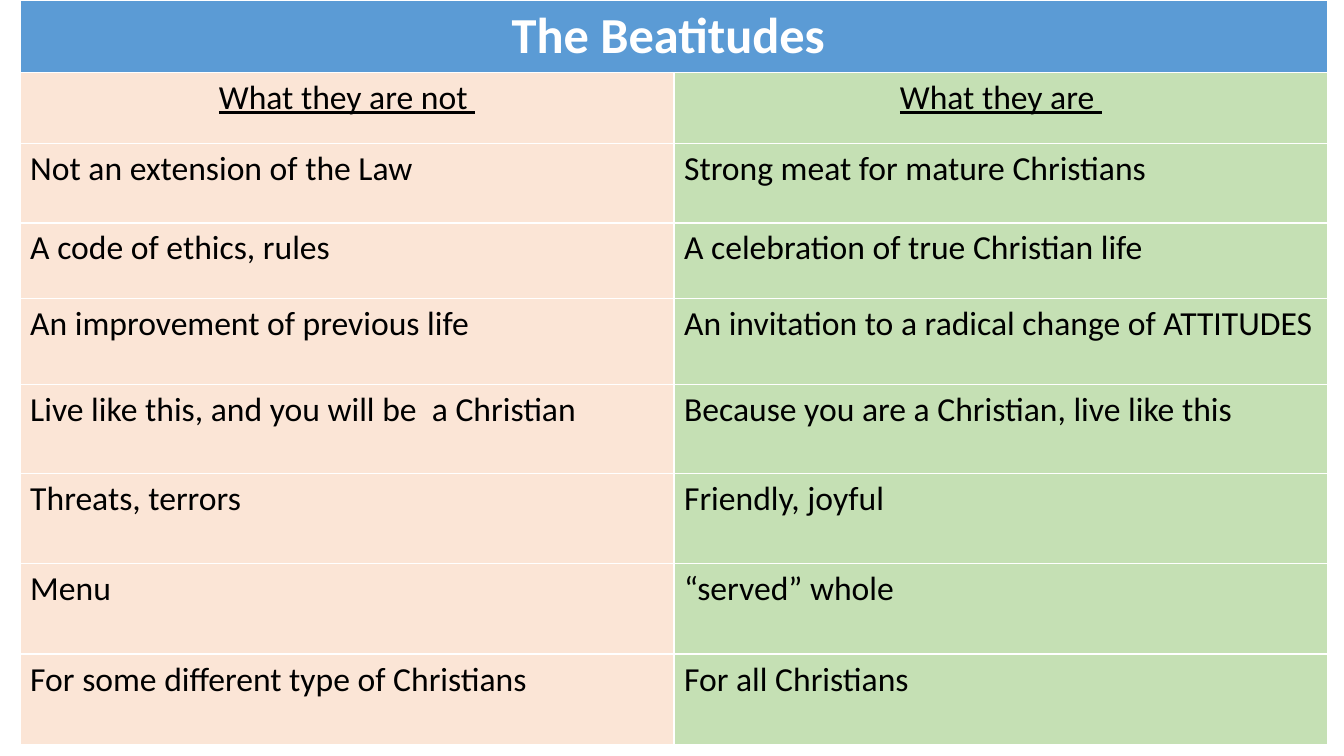
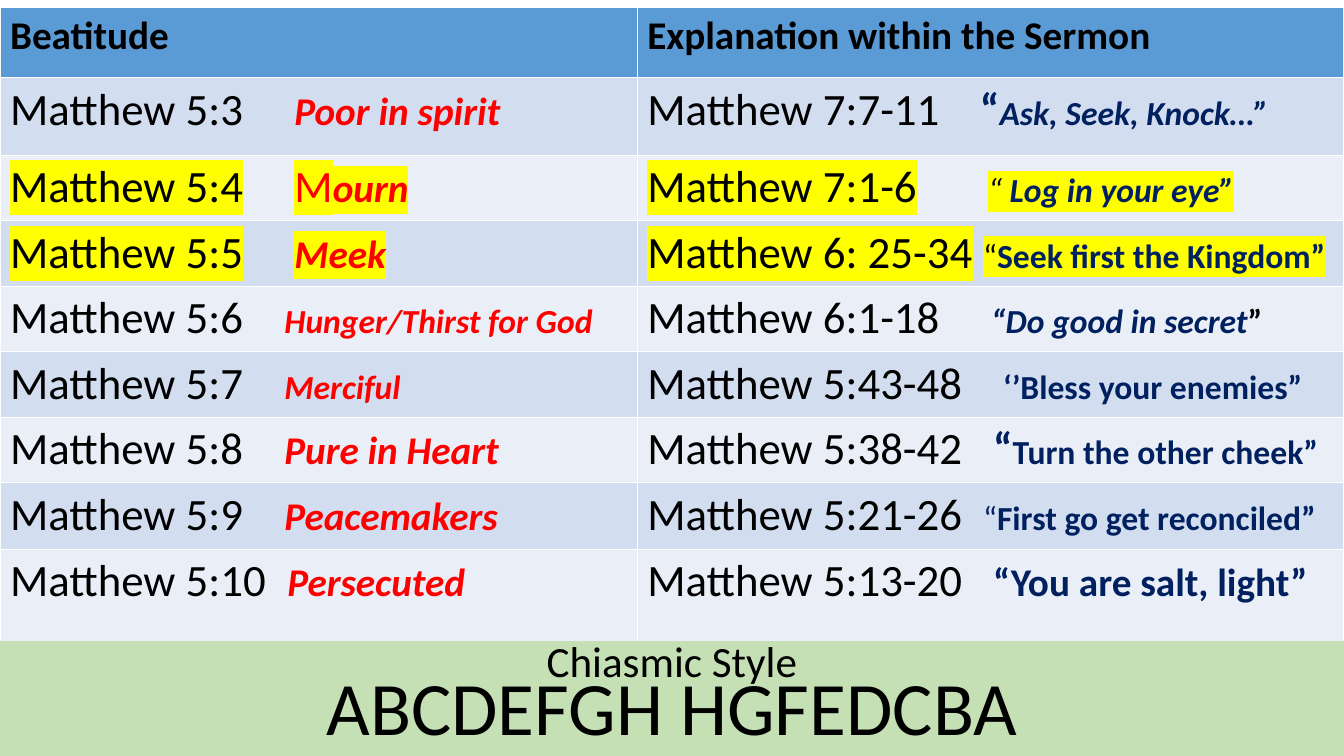
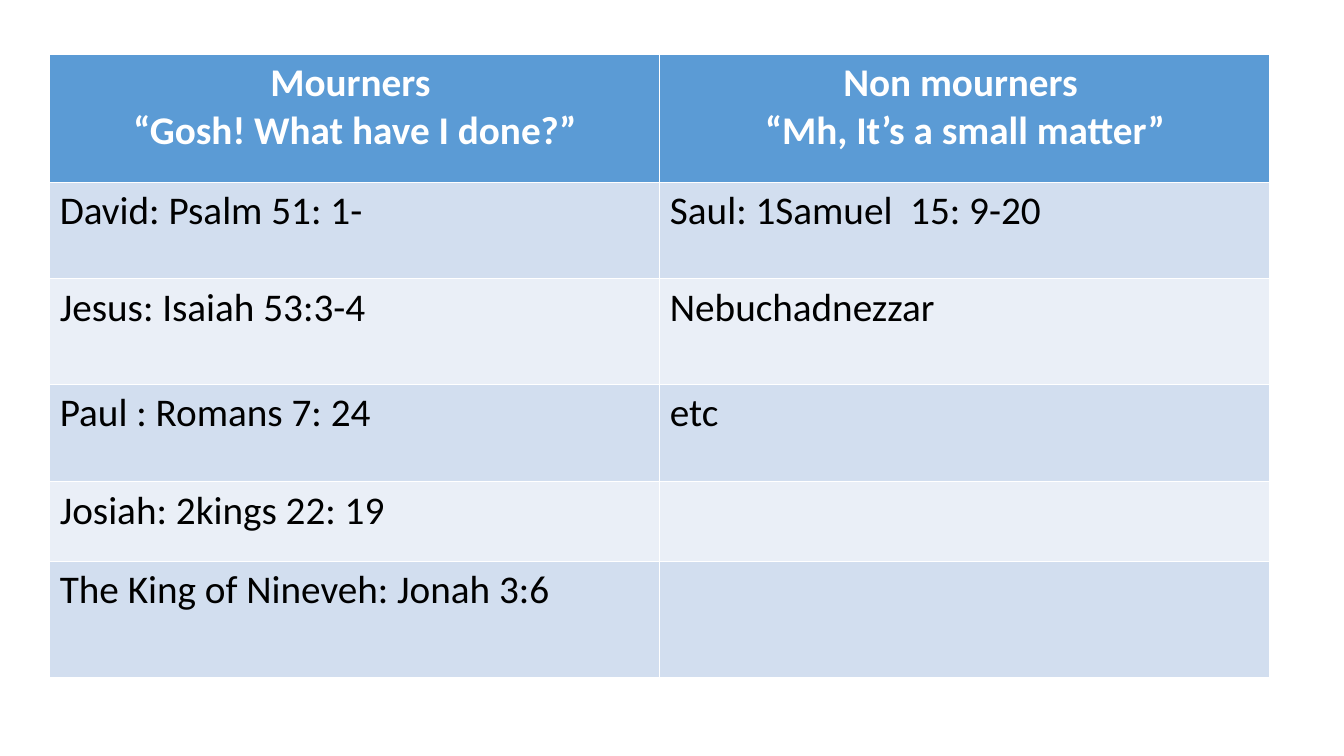
import pptx
import pptx.util
import pptx.dml.color
import pptx.enum.text
import lxml.etree

HUES = {
    "blue": "5B9BD5", "band": "D2DEEF", "pale": "EAEFF7", "peach": "FBE5D6",
    "green": "C5E0B4", "white": "FFFFFF", "black": "000000", "red": "FF0000",
    "navy": "002060", "yellow": "FFFF00",
}
FONT = "Calibri"
MID = pptx.enum.text.PP_ALIGN.CENTER
BLANK, TITLED = 6, 5


def tint(name):
    return pptx.dml.color.RGBColor.from_string(HUES[name])


def add_xml(tag, **attrs):
    return lxml.etree.Element(pptx.oxml.ns.qn(tag), **attrs)


def write(para, text, size=28, hue="black", bold=False, slant=False,
          under=False, mark=None):
    """Append one run; mark names a highlight colour."""
    run = para.add_run()
    run.text = text
    font = run.font
    font.name, font.size = FONT, pptx.util.Pt(size)
    font.bold, font.italic, font.underline = bold, slant, under
    font.color.rgb = tint(hue)
    if mark:
        light = add_xml("a:highlight")
        light.append(add_xml("a:srgbClr", val=HUES[mark]))
        run._r.rPr.find(pptx.oxml.ns.qn("a:solidFill")).addnext(light)


def set_tab(para, inches):
    stops = add_xml("a:tabLst")
    stops.append(add_xml("a:tab", pos=str(pptx.util.Inches(inches)), algn="l"))
    para._p.get_or_add_pPr().append(stops)


class Deck:
    """Holds the style and the current slide; boxes are percent of the slide."""

    def __init__(self):
        self.file = pptx.Presentation()
        self.file.slide_width = pptx.util.Inches(13.33)
        self.file.slide_height = pptx.util.Inches(7.5)

    def page(self, kind=BLANK):
        self.slide = self.file.slides.add_slide(self.file.slide_layouts[kind])

    def place(self, box):
        wide, high = self.file.slide_width, self.file.slide_height
        return [int(part * full / 100)
                for part, full in zip(box, (wide, high, wide, high))]

    def table(self, box, cols, rows):
        """Add a table whose columns and rows share the box by weight."""
        left, top, width, height = self.place(box)
        grid = self.slide.shapes.add_table(
            len(rows), len(cols), left, top, width, height).table
        for col, part in zip(grid.columns, cols):
            col.width = int(width * part / sum(cols))
        for row, part in zip(grid.rows, rows):
            row.height = int(height * part / sum(rows))
        return grid

    def cell(self, cell, fill, text="", align=None, **style):
        """Fill a cell and write its lines; return the first paragraph."""
        cell.fill.solid()
        cell.fill.fore_color.rgb = tint(fill)
        frame = cell.text_frame
        for num, line in enumerate(text.split("\n") if text else []):
            para = frame.add_paragraph() if num else frame.paragraphs[0]
            para.alignment = align
            write(para, line, **style)
        return frame.paragraphs[0]

    def title(self, box, fill, lines):
        """Use the title placeholder as a filled band of (text, size) lines."""
        band = self.slide.shapes.title
        band.left, band.top, band.width, band.height = self.place(box)
        band.fill.solid()
        band.fill.fore_color.rgb = tint(fill)
        frame = band.text_frame
        frame.word_wrap = True
        frame.auto_size = pptx.enum.text.MSO_AUTO_SIZE.NONE
        frame.vertical_anchor = pptx.enum.text.MSO_ANCHOR.MIDDLE
        for num, (text, size) in enumerate(lines):
            para = frame.add_paragraph() if num else frame.paragraphs[0]
            para.alignment, para.line_spacing = MID, 0.7
            write(para, text, size=size)


def stripe(row):
    return "band" if row % 2 else "pale"


CONTRAST = [
    ("What they are not ", "What they are "),
    ("Not an extension of the Law", "Strong meat for mature Christians"),
    ("A code of ethics, rules", "A celebration of true Christian life"),
    ("An improvement of previous life",
     "An invitation to a radical change of ATTITUDES"),
    ("Live like this, and you will be  a Christian",
     "Because you are a Christian, live like this"),
    ("Threats, terrors", "Friendly, joyful"),
    ("Menu", "“served” whole"),
    ("For some different type of Christians", "For all Christians"),
]

REF = dict(size=32)
RED = dict(hue="red", bold=True, slant=True)
RED_S = dict(RED, size=24)
OPEN = dict(size=32, hue="navy", bold=True)
SAY = dict(size=24, hue="navy", bold=True)
SAY_I = dict(SAY, slant=True)

# Each side: reference, tab stop in inches, then runs of text and style
SERMON = [
    (("Matthew 5:3", 2.82, ("Poor in spirit", RED)),
     ("Matthew 7:7-11", 3.3, ("“", OPEN), ("Ask, Seek, Knock…”", SAY_I))),
    (("Matthew 5:4", 2.82, ("M", dict(size=32, hue="red")), ("ourn", RED)),
     ("Matthew 7:1-6", 3.38, ("“ ", dict(size=24, slant=True)),
      ("Log in your eye”", SAY_I))),
    (("Matthew 5:5", 2.82, ("Meek", RED)),
     ("Matthew 6: 25-34", 3.33, ("“", dict(size=24)),
      ("Seek first the Kingdom”", SAY))),
    (("Matthew 5:6", 2.72, ("Hunger/Thirst for God", RED_S)),
     ("Matthew 6:1-18", 3.41, ("“Do good in secret", SAY_I),
      ("”", dict(size=24, bold=True)))),
    (("Matthew 5:7", 2.72, ("Merciful", RED_S)),
     ("Matthew 5:43-48", 3.53, ("‘’Bless your enemies”", SAY))),
    (("Matthew 5:8", 2.72, ("Pure in Heart", RED)),
     ("Matthew 5:38-42", 3.43, ("“", OPEN), ("Turn the other cheek”", SAY))),
    (("Matthew 5:9", 2.72, ("Peacemakers", RED)),
     ("Matthew 5:21-26", 3.33, ("“", dict(size=24, hue="navy")),
      ("First go get reconciled”", SAY))),
    (("Matthew 5:10", 2.75, ("Persecuted", RED)),
     ("Matthew 5:13-20", 3.43,
      ("“You are salt, light”", dict(SAY, size=28)))),
]
MARKED = (2, 3)

MOURN = [
    ("Mourners \n“Gosh! What have I done?”",
     "Non mourners \n“Mh, It’s a small matter”"),
    ("David: Psalm 51: 1-", "Saul: 1Samuel  15: 9-20"),
    ("Jesus: Isaiah 53:3-4", "Nebuchadnezzar"),
    ("Paul : Romans 7: 24", "etc"),
    ("Josiah: 2kings 22: 19", ""),
    ("The King of Nineveh: Jonah 3:6", ""),
]


def contrast(deck):
    deck.page()
    grid = deck.table((1.5, 0, 97.3, 98.5), (1, 1),
                      (0.72, 0.71, 0.79, 0.75, 0.86, 0.88, 0.9, 0.9, 0.9))
    grid.cell(0, 0).merge(grid.cell(0, 1))
    deck.cell(grid.cell(0, 0), "blue", "The Beatitudes ", MID,
              size=36, hue="white", bold=True)
    for row, pair in enumerate(CONTRAST, 1):
        head = row == 1
        for col, text in enumerate(pair):
            deck.cell(grid.cell(row, col), ("peach", "green")[col], text,
                      MID if head else None, size=24, under=head)


def sermon(deck):
    deck.page(TITLED)
    grid = deck.table((0, 0.95, 100, 84.5), (6.32, 7.01),
                      (0.7, 0.77, 0.65, 0.65, 0.65, 0.65, 0.65, 0.66, 0.96))
    for col, text in enumerate(("Beatitude", "Explanation within the Sermon")):
        deck.cell(grid.cell(0, col), "blue", text, bold=True)
    for row, pair in enumerate(SERMON, 1):
        mark = "yellow" if row in MARKED else None
        for col, (ref, stop, *runs) in enumerate(pair):
            para = deck.cell(grid.cell(row, col), stripe(row),
                             ref + "\t", mark=mark, **REF)
            set_tab(para, stop)
            for text, style in runs:
                write(para, text, mark=mark, **style)
    # The band lies over the table's lower edge
    band = deck.slide.shapes.title._element
    band.getparent().append(band)
    deck.title((0, 84.8, 100, 15.2), "green",
               (("Chiasmic Style", 30.8), ("ABCDEFGH HGFEDCBA", 53.9)))


def mourn(deck):
    deck.page()
    grid = deck.table((3.7, 7.2, 90.8, 82.5), (1, 1),
                      (1.27, 0.96, 1.05, 0.97, 0.79, 1.16))
    for row, pair in enumerate(MOURN):
        for col, text in enumerate(pair):
            if row:
                deck.cell(grid.cell(row, col), stripe(row), text)
            else:
                deck.cell(grid.cell(row, col), "blue", text, MID,
                          hue="white", bold=True)


def main():
    deck = Deck()
    for build in (contrast, sermon, mourn):
        build(deck)
    deck.file.save("out.pptx")


if __name__ == "__main__":
    main()
